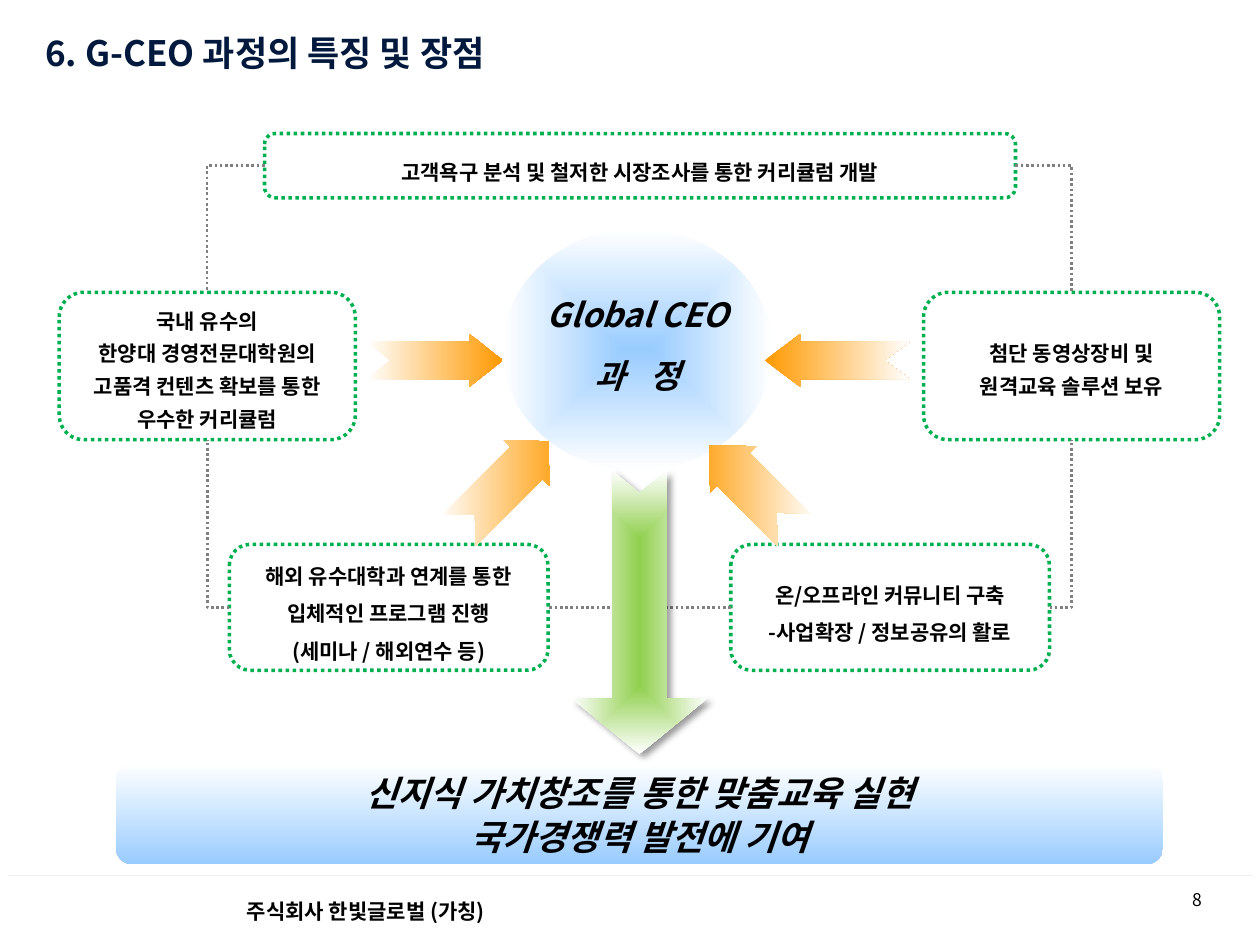
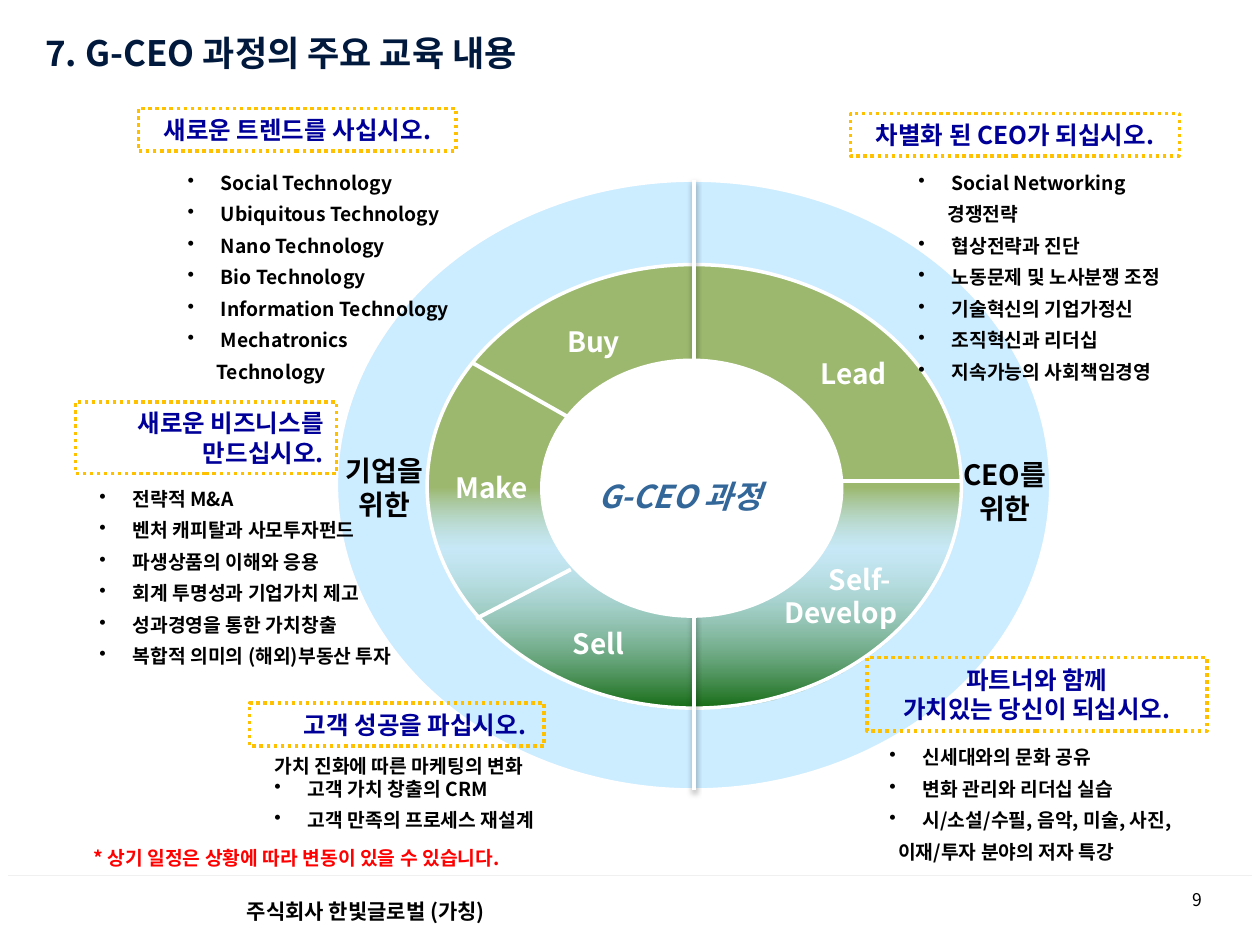
from pptx import Presentation
from pptx import util as u
from pptx.dml.color import RGBColor
from pptx.enum import dml, shapes, text
from pptx.oxml import parse_xml
from pptx.oxml.ns import nsdecls, qn

# Grid: 100 columns by 75 rows on a 10 x 7.5 inch slide
COLUMNS, ROWS = 100, 75
WIDTH, HEIGHT = u.Inches(10), u.Inches(7.5)

FONT = "Noto Sans CJK KR"
BLACK = RGBColor(0x00, 0x00, 0x00)
WHITE = RGBColor(0xFF, 0xFF, 0xFF)
NAVY = RGBColor(0x00, 0x19, 0x3C)
RULE_GRAY = RGBColor(0xF0, 0xF0, 0xF0)
LINK_GRAY = RGBColor(0x80, 0x80, 0x80)
SKY = RGBColor(0x99, 0xCC, 0xFF)
PALE_SKY = RGBColor(0xCC, 0xEC, 0xFF)
ORANGE = RGBColor(0xFF, 0x99, 0x00)
GOLD = RGBColor(0xFF, 0xC0, 0x00)
LIME = RGBColor(0x92, 0xD0, 0x50)
GREEN = RGBColor(0x00, 0xB0, 0x50)
OLIVE = RGBColor(0x9C, 0xB8, 0x6E)
MINT = RGBColor(0xBB, 0xE0, 0xE3)
FOREST = RGBColor(0x15, 0x6B, 0x13)
STEEL = RGBColor(0x33, 0x66, 0x99)
LABEL_BLUE = RGBColor(0x00, 0x00, 0x99)
RED = RGBColor(0xFF, 0x00, 0x00)

KIND = shapes.MSO_SHAPE
LEFT, CENTER, RIGHT = text.PP_ALIGN.LEFT, text.PP_ALIGN.CENTER, text.PP_ALIGN.RIGHT
DOTS = dml.MSO_LINE.ROUND_DOT
TOP_SIDE, LEFT_SIDE, BOTTOM_SIDE, RIGHT_SIDE = range(4)


def x(columns):
    return round(WIDTH * columns / COLUMNS)


def y(rows):
    return round(HEIGHT * rows / ROWS)


def write(shape, lines, anchor=text.MSO_ANCHOR.MIDDLE, wrap=True, margin=1, **style):
    """Fill a shape with paragraphs; a line is a string or (string, own format)."""
    frame = shape.text_frame
    frame.word_wrap, frame.vertical_anchor = wrap, anchor
    frame.margin_left = x(margin)
    for number, line in enumerate(lines):
        content, own = (line, {}) if isinstance(line, str) else line
        paragraph = frame.paragraphs[0] if number == 0 else frame.add_paragraph()
        format_paragraph(paragraph, content, **{**style, **own})


def format_paragraph(paragraph, content, size=12, color=BLACK, bold=True, italic=False,
                     align=CENTER, spacing=None, before=0, indent=0, hanging=0,
                     bullet=False, tracking=0):
    paragraph.alignment = align
    paragraph.space_before = u.Pt(before)
    if spacing:
        paragraph.line_spacing = spacing
    properties = paragraph._p.get_or_add_pPr()
    properties.set("marL", str(x(indent)))
    properties.set("indent", str(-x(hanging)))
    if bullet:
        properties.append(parse_xml(f'<a:buChar {nsdecls("a")} char="•"/>'))
    run = paragraph.add_run()
    run.text = content
    font = run.font
    font.name, font.size, font.bold, font.italic = FONT, u.Pt(size), bold, italic
    font.color.rgb = color
    run_properties = run._r.get_or_add_rPr()
    run_properties.append(parse_xml(f'<a:ea {nsdecls("a")} typeface="{FONT}"/>'))
    if tracking:
        run_properties.set("spc", str(tracking * 100))


class Deck:
    """Holds the shared style and the slide being drawn."""

    def __init__(self):
        self.presentation = Presentation()
        self.presentation.slide_width, self.presentation.slide_height = WIDTH, HEIGHT
        self.slide = None

    def new_slide(self, title, number):
        self.slide = self.presentation.slides.add_slide(self.presentation.slide_layouts[6])
        self.line((0.6, 69.5), (99.4, 69.5), RULE_GRAY, 0.75)
        self.label((92.7, 69.8, 4.7, 3.1), [str(number)], size=10, bold=False)
        footer = self.shape(KIND.RECTANGLE, (0, 69.9, 77.5, 4.8), fill=WHITE)
        write(footer, ["주식회사 한빛글로벌 (가칭)"], align=LEFT, margin=19.6)
        self.label((2.6, 1.3, 71.8, 5.8), [title], size=20, color=NAVY, align=LEFT,
                   indent=4, hanging=4)

    def shape(self, kind, area, fill=None, line=None, width=2, dash=None,
              rotation=0, adjustments=(), shadow=None):
        left, top, across, down = area
        shape = self.slide.shapes.add_shape(kind, x(left), y(top), x(across), y(down))
        shape.rotation = rotation
        for index, value in enumerate(adjustments):
            shape.adjustments[index] = value
        if fill is None:
            shape.fill.background()
        else:
            shape.fill.solid()
            shape.fill.fore_color.rgb = fill
        if line is None:
            shape.line.fill.background()
        else:
            self.stroke(shape, line, width, dash)
        self.effects(shape, shadow)
        return shape

    def stroke(self, shape, color, width, dash=None):
        shape.line.color.rgb = color
        shape.line.width = u.Pt(width)
        if dash:
            shape.line.dash_style = dash

    def effects(self, shape, shadow=None):
        """Replace the theme shadow by (opacity %, blur, distance, angle) or by none."""
        outer = ""
        if shadow:
            opacity, blur, distance, angle = shadow
            outer = (f'<a:outerShdw blurRad="{u.Pt(blur)}" dist="{u.Pt(distance)}" '
                     f'dir="{angle * 60000}" rotWithShape="0"><a:srgbClr val="{BLACK}">'
                     f'<a:alpha val="{opacity * 1000}"/></a:srgbClr></a:outerShdw>')
        shape._element.spPr.append(
            parse_xml(f'<a:effectLst {nsdecls("a")}>{outer}</a:effectLst>'))

    def gradient(self, shape, stops, angle=None):
        """Stops are (position %, colour, opacity %); no angle means from the centre."""
        colors = "".join(
            f'<a:gs pos="{position * 1000}"><a:srgbClr val="{color}">'
            f'<a:alpha val="{opacity * 1000}"/></a:srgbClr></a:gs>'
            for position, color, opacity in stops)
        if angle is None:
            course = ('<a:path path="shape"><a:fillToRect l="50000" t="50000" '
                      'r="50000" b="50000"/></a:path>')
        else:
            course = f'<a:lin ang="{angle * 60000}" scaled="1"/>'
        shape.fill.gradient()
        plain = shape._element.spPr.find(qn("a:gradFill"))
        plain.getparent().replace(plain, parse_xml(
            f'<a:gradFill {nsdecls("a")} rotWithShape="0">'
            f'<a:gsLst>{colors}</a:gsLst>{course}</a:gradFill>'))

    def label(self, area, lines, **style):
        left, top, across, down = area
        box = self.slide.shapes.add_textbox(x(left), y(top), x(across), y(down))
        write(box, lines, **style)

    def bullets(self, area, items):
        lines = [(f" {item}", {"bullet": True, "indent": 2.3, "hanging": 2.3})
                 if isinstance(item, str) else item for item in items]
        self.label(area, lines, size=11, align=LEFT, spacing=u.Pt(18),
                   anchor=text.MSO_ANCHOR.TOP)

    def heading(self, area, lines, **style):
        box = self.shape(KIND.RECTANGLE, area, line=GOLD, dash=DOTS)
        write(box, lines, size=14, color=LABEL_BLUE, wrap=len(lines) > 1, **style)

    def feature(self, area, lines, spacing):
        box = self.shape(KIND.FLOWCHART_ALTERNATE_PROCESS, area, line=GREEN, dash=DOTS)
        write(box, lines, spacing=spacing)
        return box

    def orange_arrow(self, area, head, rotation=0, points_right=True):
        arrow = self.shape(KIND.NOTCHED_RIGHT_ARROW, area, rotation=rotation,
                           adjustments=(0.71, head))
        first, last = (WHITE, ORANGE) if points_right else (ORANGE, WHITE)
        self.gradient(arrow, [(0, first, 100), (100, last, 100)], 0)

    def line(self, start, end, color, width, shadow=None):
        connector = self.slide.shapes.add_connector(
            shapes.MSO_CONNECTOR.STRAIGHT, x(start[0]), y(start[1]), x(end[0]), y(end[1]))
        self.stroke(connector, color, width)
        self.effects(connector, shadow)

    def link(self, start, start_side, end, end_side, bent=True):
        kind = shapes.MSO_CONNECTOR.ELBOW if bent else shapes.MSO_CONNECTOR.STRAIGHT
        connector = self.slide.shapes.add_connector(kind, 0, 0, 0, 0)
        connector.begin_connect(start, start_side)
        connector.end_connect(end, end_side)
        if bent:  # a single corner
            connector._element.spPr.find(qn("a:prstGeom")).set("prst", "bentConnector2")
        self.stroke(connector, LINK_GRAY, 1.5, DOTS)
        self.effects(connector)


def draw_strengths(deck):
    deck.new_slide("6. G-CEO 과정의 특징 및 장점", 8)

    # Core
    core = deck.shape(KIND.OVAL, (39.9, 18.2, 21.4, 19.1))
    deck.gradient(core, [(0, SKY, 100), (100, WHITE, 100)])
    write(core, ["Global CEO", ("과 정", {"before": 19, "tracking": 5})],
          size=19, italic=True, spacing=0.7, wrap=False)

    # Five strengths around it
    curriculum = deck.feature((21, 10.6, 59.6, 5.1),
                              ["고객욕구 분석 및 철저한 시장조사를 통한 커리큘럼 개발"], 1.5)
    equipment = deck.feature((73.3, 23.2, 23.5, 11.7),
                             ["첨단 동영상장비 및", "원격교육 솔루션 보유"], 1.3)
    overseas = deck.feature((18.2, 43.2, 25.3, 10), [
        "해외 유수대학과 연계를 통한", "입체적인 프로그램 진행", "(세미나 / 해외연수 등)"], 1.5)
    community = deck.feature((58, 43.2, 25.3, 10), [
        "온/오프라인 커뮤니티 구축", "-사업확장 / 정보공유의 활로"], 1.5)
    contents = deck.feature((4.7, 23.2, 23.5, 11.7), [
        "국내 유수의", "한양대 경영전문대학원의", "고품격 컨텐츠 확보를 통한",
        "우수한 커리큘럼"], 1.3)

    # Dotted ring
    deck.link(curriculum, RIGHT_SIDE, equipment, TOP_SIDE)
    deck.link(curriculum, LEFT_SIDE, contents, TOP_SIDE)
    deck.link(community, RIGHT_SIDE, equipment, BOTTOM_SIDE)
    deck.link(overseas, LEFT_SIDE, contents, BOTTOM_SIDE)
    deck.link(community, LEFT_SIDE, overseas, RIGHT_SIDE, bent=False)

    # Arrows into the core and down to the result
    deck.orange_arrow((29.1, 26.5, 10.8, 4.2), 0.63)
    deck.orange_arrow((60.7, 26.5, 11.5, 4.2), 0.67, 180, points_right=False)
    deck.orange_arrow((54.9, 36.1, 9.5, 5.2), 0.52, 225, points_right=False)
    deck.orange_arrow((35, 36, 10, 5.1), 0.48, 315)
    result_arrow = deck.shape(KIND.NOTCHED_RIGHT_ARROW, (39.5, 43.2, 22.5, 10.8), rotation=90,
                              adjustments=(0.4, 0.41), shadow=(40, 4, 3, 45))
    deck.gradient(result_arrow, [(1, LIME, 100), (100, WHITE, 100)])

    # Result
    result = deck.shape(KIND.FLOWCHART_ALTERNATE_PROCESS, (9.2, 60.6, 83.1, 8))
    deck.gradient(result, [(0, WHITE, 100), (100, SKY, 100)], 90)
    write(result, ["신지식 가치창조를 통한 맞춤교육 실현", "국가경쟁력 발전에 기여"],
          size=20, italic=True, spacing=u.Pt(25))


def draw_contents(deck):
    deck.new_slide("7. G-CEO 과정의 주요 교육 내용", 9)

    # Rings and their dividers
    deck.shape(KIND.OVAL, (26.7, 14.3, 56.7, 48.4), fill=PALE_SKY, line=WHITE)
    ring = deck.shape(KIND.OVAL, (33.9, 21, 42.4, 35.2), line=WHITE)
    deck.gradient(ring, [(50, OLIVE, 100), (64, MINT, 27), (100, FOREST, 100)], 90)
    deck.line((55.1, 14.3), (55.1, 62.7), WHITE, 2.25, shadow=(35, 3.1, 1.8, 90))
    hub = deck.shape(KIND.OVAL, (43, 28.6, 23.8, 20.3), fill=WHITE, line=WHITE)
    write(hub, ["G-CEO 과정"], size=18, color=STEEL, italic=True, align=LEFT, spacing=1.4)
    for start, end in (((66.1, 38.2), (76.4, 38.2)), ((45.3, 45.2), (37.8, 49.1)),
                       ((37.5, 28.8), (45.8, 33.5))):
        deck.line(start, end, WHITE, 2.25)

    # Ring labels
    for area, lines, color in (
            ((43.7, 25.2, 6.8, 3.7), ["Buy"], WHITE),
            ((63.5, 27.8, 8.5, 3.7), ["Lead"], WHITE),
            ((34.4, 36.8, 9.3, 3.7), ["Make"], WHITE),
            ((44.1, 49.2, 6.8, 3.7), ["Sell"], WHITE),
            ((60.4, 44.1, 12.7, 6.4), [("Self-", {"indent": 3}), "Develop"], WHITE),
            ((25.4, 35.5, 10.2, 6.4), ["기업을", "위한"], BLACK),
            ((75.1, 35.8, 9.3, 6.4), ["CEO를", "위한"], BLACK)):
        deck.label(area, lines, size=16, color=color, wrap=len(lines) > 1 and color == WHITE)

    # Topics: heading and list
    deck.heading((19.8, 55.8, 23.4, 3.4), ["고객 성공을 파십시오. "], align=RIGHT)
    tight = {"spacing": u.Pt(13)}
    deck.bullets((20.8, 59.4, 26.2, 7.2), [
        ("가치 진화에 따른 마케팅의 변화", tight),
        (" 고객 가치 창출의 CRM", {**tight, "bullet": True, "indent": 2.3, "hanging": 2.3}),
        "고객 만족의 프로세스 재설계"])

    deck.heading((68.8, 52.2, 27, 5.8), ["파트너와 함께", "가치있는 당신이 되십시오."])
    deck.bullets((69.6, 58, 27.1, 11.1), [
        "신세대와의 문화 공유", "변화 관리와 리더십 실습", "시/소설/수필, 음악, 미술, 사진,",
        ("이재/투자 분야의 저자 특강", {"indent": 0.7})])

    deck.heading((6, 31.9, 20.7, 5.7), ["새로운 비즈니스를", "만드십시오."], align=RIGHT)
    deck.bullets((6.9, 37.5, 25.9, 16.2), [
        "전략적 M&A", "벤처 캐피탈과 사모투자펀드", "파생상품의 이해와 응용",
        "회계 투명성과 기업가치 제고", "성과경영을 통한 가치창출",
        "복합적 의미의 (해외)부동산 투자"])

    deck.heading((11, 8.6, 25.2, 3.4), ["새로운 트렌드를 사십시오."])
    deck.bullets((13.9, 12.4, 23.4, 16.2), [
        f"{field} Technology" for field in
        ("Social", "Ubiquitous", "Nano", "Bio", "Information", "Mechatronics")])

    deck.heading((67.5, 9, 26.1, 3.4), ["차별화 된 CEO가 되십시오."])
    deck.bullets((71.9, 12.4, 23.5, 16.2), [
        "Social Networking 경쟁전략", "협상전략과 진단", "노동문제 및 노사분쟁 조정",
        "기술혁신의 기업가정신", "조직혁신과 리더십", "지속가능의 사회책임경영"])

    # Footnote
    deck.label((4.4, 66.6, 38.3, 2.9), ["* 상기 일정은 상황에 따라 변동이 있을 수 있습니다."],
               size=11, color=RED, wrap=False)


def main():
    deck = Deck()
    draw_strengths(deck)
    draw_contents(deck)
    deck.presentation.save("out.pptx")


if __name__ == "__main__":
    main()
